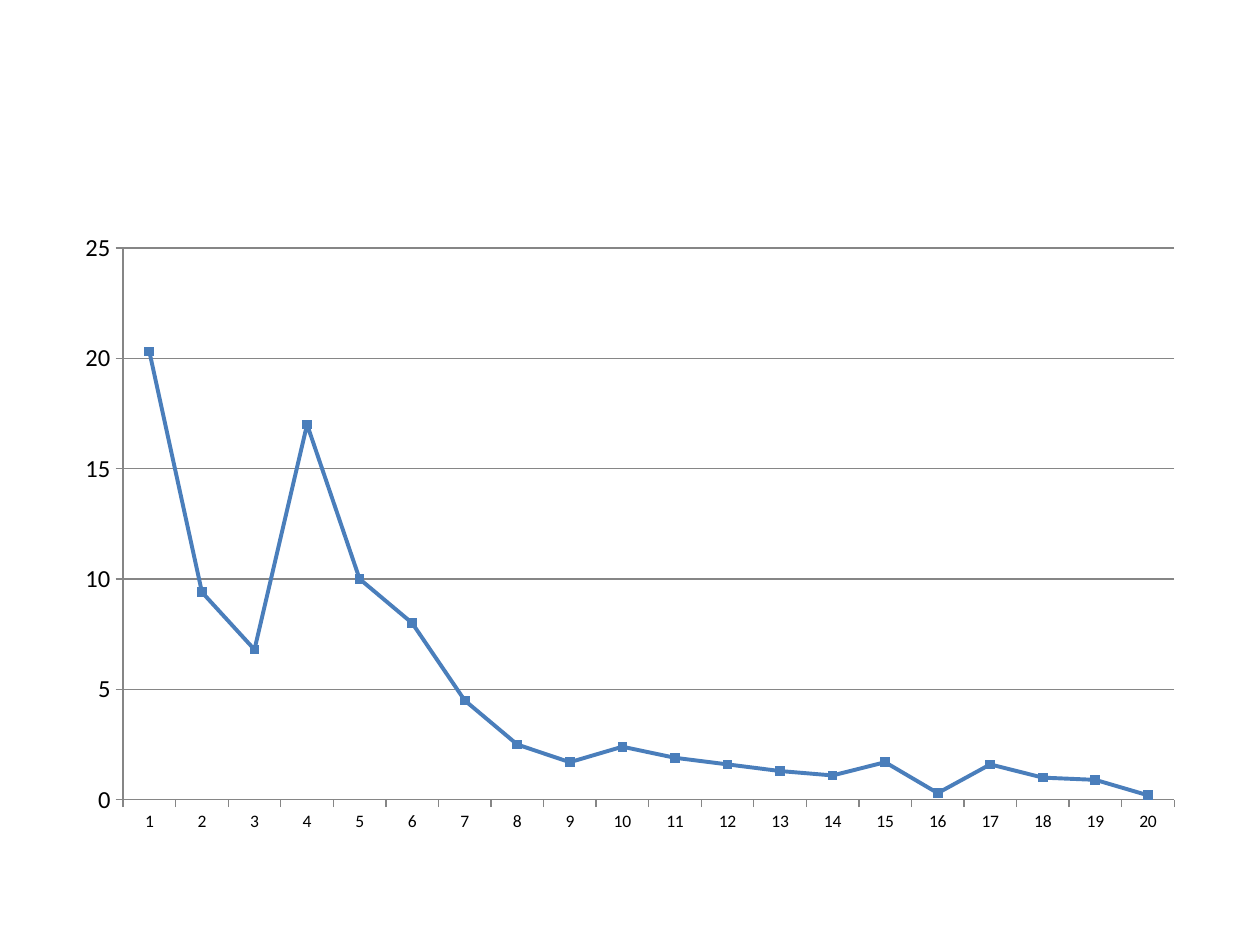
from lxml import etree
from pptx import Presentation
from pptx import util as u
from pptx.chart import data
from pptx.dml import color
from pptx.enum import chart as ch
from pptx.oxml import ns

VALUES = [20.3, 9.4, 6.8, 17, 10, 8, 4.5, 2.5, 1.7, 2.4,
          1.9, 1.6, 1.3, 1.1, 1.7, 0.3, 1.6, 1, 0.9, 0.2]


def paint(fill, code):
    """Give a fill one solid colour."""
    fill.solid()
    fill.fore_color.rgb = color.RGBColor.from_string(code)


def stroke(line, code, width):
    """Set the colour and width of a line."""
    paint(line.fill, code)
    line.width = u.Pt(width)


def add_chart(slide, left, top, width, height):
    """Add the line chart with its data."""
    table = data.CategoryChartData()
    table.categories = [str(n + 1) for n in range(len(VALUES))]
    table.add_series("Series 1", VALUES)
    frame = slide.shapes.add_chart(
        ch.XL_CHART_TYPE.LINE_MARKERS, u.Pt(left), u.Pt(top),
        u.Pt(width), u.Pt(height), table)
    chart = frame.chart
    chart.has_legend = False
    chart.has_title = False
    chart.font.name = "Calibri"
    chart.font.size = u.Pt(10)
    paint(chart.font.fill, "000000")
    return chart


def style_axis(axis, size):
    """Format an axis line, its ticks and its labels."""
    axis.major_tick_mark = ch.XL_TICK_MARK.OUTSIDE
    axis.minor_tick_mark = ch.XL_TICK_MARK.NONE
    axis.tick_labels.font.size = u.Pt(size)
    stroke(axis.format.line, "868686", 0.75)


def style_scale(axis):
    """Set the range and gridlines of the value axis."""
    axis.minimum_scale = 0
    axis.maximum_scale = 25
    axis.major_unit = 5
    axis.has_major_gridlines = True
    stroke(axis.major_gridlines.format.line, "868686", 0.75)


def style_line(plot):
    """Format the line and its square markers."""
    plot.vary_by_categories = False
    line = plot.series[0]
    line.smooth = False
    stroke(line.format.line, "4A7EBB", 2.25)
    mark = line.marker
    mark.style = ch.XL_MARKER_STYLE.SQUARE
    mark.size = 5
    paint(mark.format.fill, "4F81BD")
    stroke(mark.format.line, "4A7EBB", 0.75)


def place_plot(chart, **box):
    """Fix the inner plot area as fractions of the chart."""
    area = chart.plots[0]._element.getparent()
    for old in area.findall(ns.qn("c:layout")):
        area.remove(old)
    layout = etree.Element(ns.qn("c:layout"))
    area.insert(0, layout)
    manual = etree.SubElement(layout, ns.qn("c:manualLayout"))
    rules = {"layoutTarget": "inner", "xMode": "edge", "yMode": "edge", **box}
    for name, value in rules.items():
        etree.SubElement(manual, ns.qn("c:" + name), val=str(value))


def main():
    """Build the slide and save it."""
    deck = Presentation()
    deck.slide_width, deck.slide_height = u.Pt(720), u.Pt(540)
    slide = deck.slides.add_slide(deck.slide_layouts[6])
    paint(slide.background.fill, "FFFFFF")
    chart = add_chart(slide, 36, 126, 648, 356.4)
    style_axis(chart.category_axis, 10)
    style_axis(chart.value_axis, 14)
    style_scale(chart.value_axis)
    style_line(chart.plots[0])
    place_plot(chart, x=0.053, y=0.044, w=0.927, h=0.885)
    deck.save("out.pptx")


if __name__ == "__main__":
    main()
